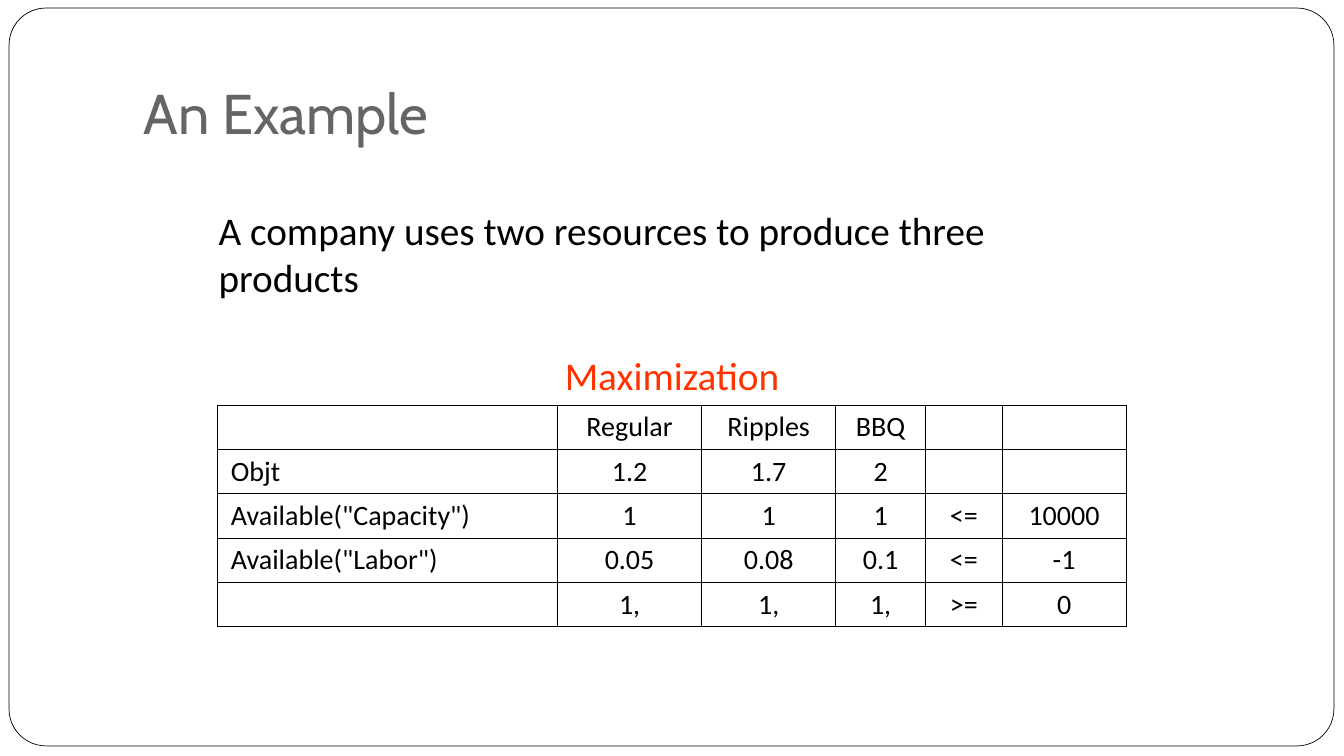
from lxml.etree import SubElement
from pptx import Presentation
from pptx.dml.color import RGBColor
from pptx.enum.shapes import MSO_SHAPE
from pptx.enum.text import MSO_ANCHOR, PP_ALIGN
from pptx.oxml.ns import qn
from pptx.util import Inches, Pt

BLACK, WHITE, GREY, RED = "000000", "FFFFFF", "696464", "FF3300"


def color(hex_code):
    return RGBColor.from_string(hex_code)


def apply(target, formats):
    for name, value in formats.items():
        setattr(target, name, value)


class ExampleSlide:
    cell_format = dict(vertical_anchor=MSO_ANCHOR.BOTTOM,
                       margin_left=Inches(0.13), margin_right=Inches(0.13),
                       margin_top=Inches(0.05), margin_bottom=Inches(0.05))

    def __init__(self, slide):
        self.slide = slide

    def frame(self, *box):
        border = self.slide.shapes.add_shape(
            MSO_SHAPE.ROUNDED_RECTANGLE, *map(Inches, box))
        border.adjustments[0] = 0.05
        border.shadow.inherit = False
        border.fill.solid()
        border.fill.fore_color.rgb = color(WHITE)
        border.line.color.rgb = color(BLACK)
        border.line.width = Pt(0.5)

    def add_words(self, paragraph, words, size, hex_code=BLACK,
                  font="Calibri"):
        run = paragraph.add_run()
        run.text = words
        apply(run.font, dict(size=Pt(size), name=font))
        run.font.color.rgb = color(hex_code)

    def text(self, box, words, size, frame_format, **style):
        body = self.slide.shapes.add_textbox(*map(Inches, box)).text_frame
        apply(body, dict(word_wrap=True, **frame_format))
        self.add_words(body.paragraphs[0], words, size, **style)

    def borders(self, cell, visible):
        properties = cell._tc.get_or_add_tcPr()
        for side in "LRTB":
            line = SubElement(properties, qn(f"a:ln{side}"), w=str(Pt(1)))
            if side in visible:
                fill = SubElement(line, qn("a:solidFill"))
                SubElement(fill, qn("a:srgbClr"), val=BLACK)
            else:
                SubElement(line, qn("a:noFill"))

    def cell(self, cell, words, size, hex_code, align, visible):
        apply(cell, self.cell_format)
        self.borders(cell, visible)
        cell.fill.background()
        paragraph = cell.text_frame.paragraphs[0]
        paragraph.alignment = align
        if words:
            self.add_words(paragraph, words, size, hex_code)

    def table(self, left, top, widths, heights, caption, rows):
        table = self.slide.shapes.add_table(
            len(heights), len(widths), Inches(left), Inches(top),
            Inches(sum(widths)), Inches(sum(heights))).table
        apply(table, dict(first_row=False, horz_banding=False))
        for column, width in zip(table.columns, widths):
            column.width = Inches(width)
        for row, height in zip(table.rows, heights):
            row.height = Inches(height)
        # Caption across the top, with only its lower edge drawn
        table.cell(0, 0).merge(table.cell(0, len(widths) - 1))
        for c in range(len(widths)):
            self.cell(table.cell(0, c), "" if c else caption, 28, RED,
                      PP_ALIGN.CENTER, "B")
        # Grid of coefficients
        for r, row in enumerate(rows, 1):
            for c, words in enumerate(row):
                align = PP_ALIGN.CENTER if c else PP_ALIGN.LEFT
                self.cell(table.cell(r, c), words, 20, BLACK, align, "LRTB")


def main():
    deck = Presentation()
    apply(deck, dict(slide_width=Inches(13.33), slide_height=Inches(7.5)))
    example = ExampleSlide(deck.slides.add_slide(deck.slide_layouts[6]))

    # Frame and title
    example.frame(0.09, 0.08, 13.14, 7.32)
    example.text((1.33, 0.3, 11.33, 1.25), "An Example", 40,
                 dict(vertical_anchor=MSO_ANCHOR.BOTTOM,
                      margin_bottom=Inches(0.1)),
                 hex_code=GREY, font="Cabin")

    # Model table
    model = [
        ["", "Regular", "Ripples", "BBQ", "", ""],
        ["Objt", "1.2", "1.7", "2", "", ""],
        ['Available("Capacity")', "1", "1", "1", "<=", "10000"],
        ['Available("Labor")', "0.05", "0.08", "0.1", "<=", "-1"],
        ["", "1,", "1,", "1,", ">=", "0"],
    ]
    example.table(2.16, 3.45, [3.37, 1.43, 1.33, 0.89, 0.76, 1.23],
                  [0.57] + [0.44] * len(model), "Maximization", model)

    # Problem statement
    example.text((2.07, 2, 9.18, 1.04),
                 "A company uses two resources to produce three products",
                 28, {})

    deck.save("out.pptx")


if __name__ == "__main__":
    main()
